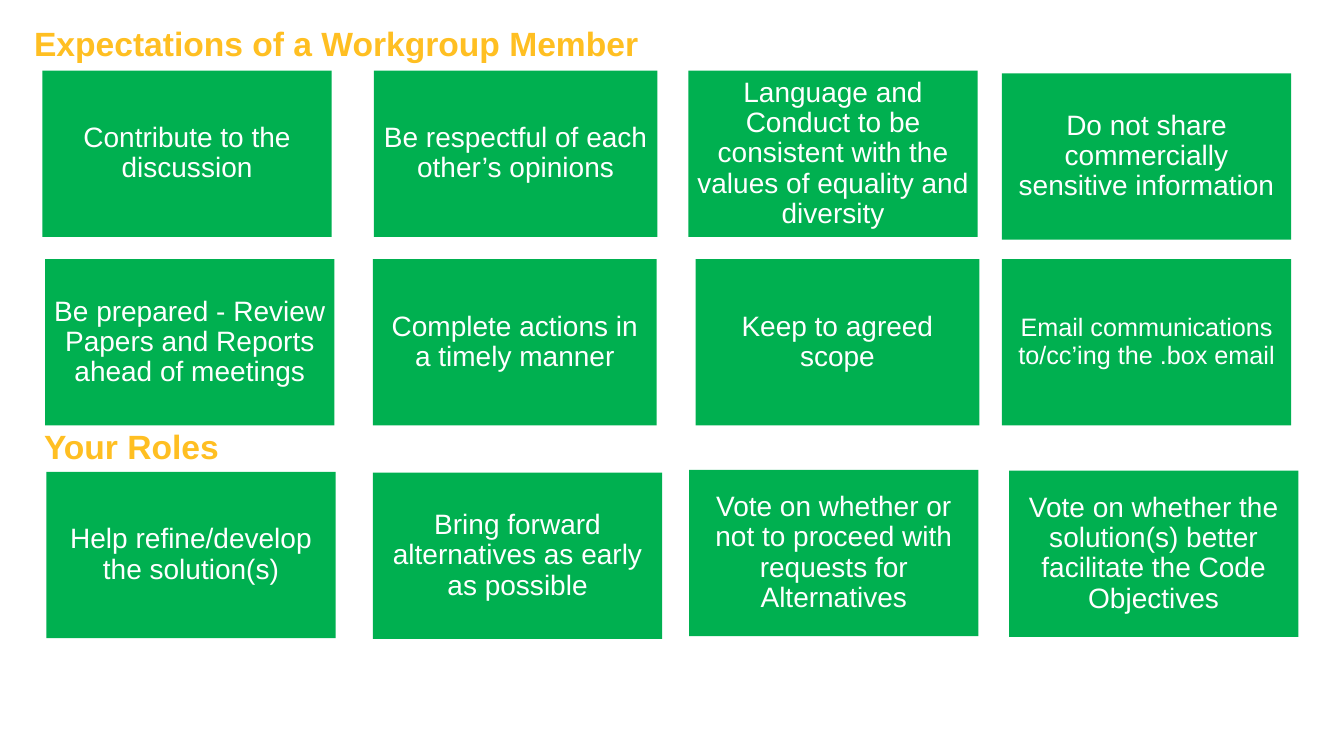
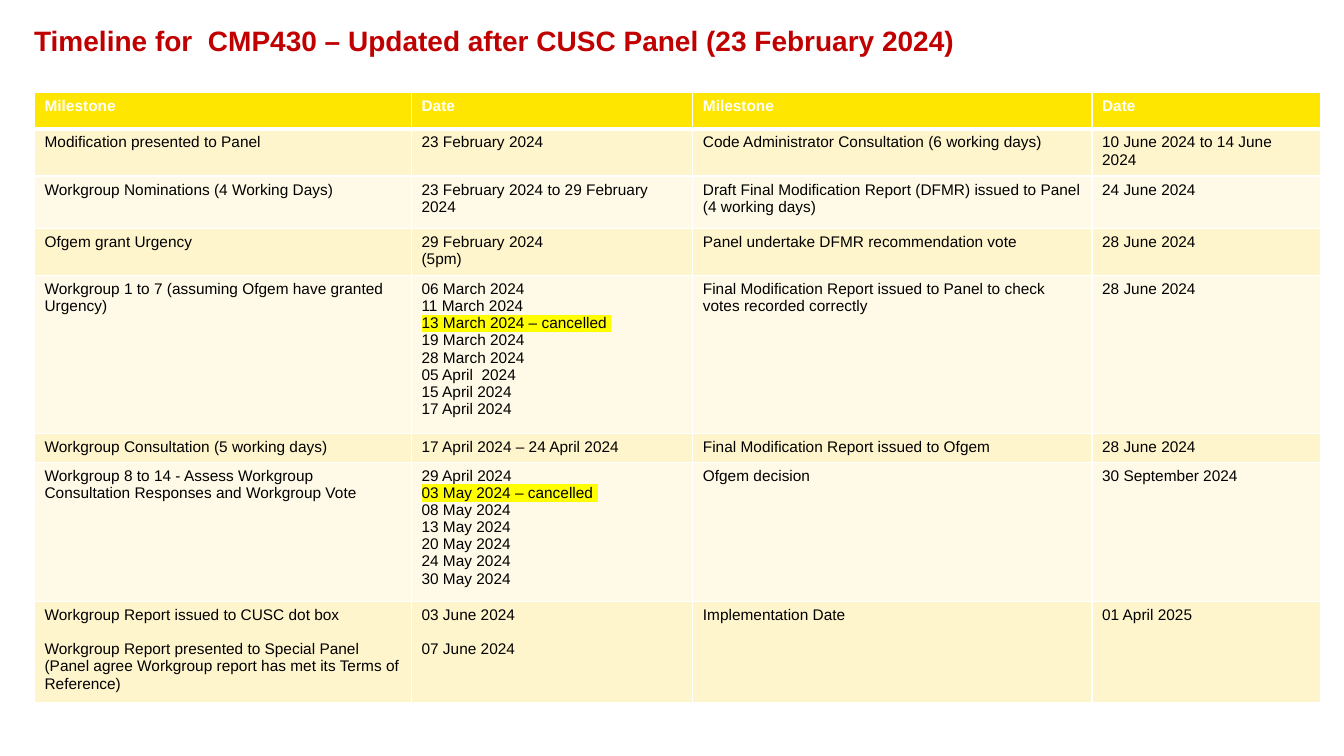
from lxml import etree
from pptx import Presentation
from pptx import util as u
from pptx.dml.color import RGBColor
from pptx.enum import shapes, text
from pptx.oxml import ns

WHITE = RGBColor(0xFF, 0xFF, 0xFF)
BLACK = RGBColor(0x00, 0x00, 0x00)
AMBER = RGBColor(0xFF, 0xBF, 0x22)
RED = RGBColor(0xC0, 0x00, 0x00)
GREEN = RGBColor(0x00, 0xB0, 0x50)
YELLOW = RGBColor(0xFF, 0xE6, 0x00)
BANDS = [RGBColor(0xFF, 0xF5, 0xCC), RGBColor(0xFF, 0xFA, 0xE7)]
HIGHLIGHT = RGBColor(0xFF, 0xFF, 0x00)
FONT = "Arial"


def add_run(p, words, size, color, bold=False):
    r = p.add_run()
    r.text = words
    r.font.name = FONT
    r.font.size = u.Pt(size)
    r.font.bold = bold
    r.font.color.rgb = color
    return r


def add_heading(s, words, left, top, size, color):
    sp = s.shapes.add_textbox(u.Cm(left), u.Cm(top), u.Cm(31.52), u.Cm(1.83))
    sp.text_frame.word_wrap = True
    p = sp.text_frame.paragraphs[0]
    p.line_spacing = 0.9
    add_run(p, words, size, color, True)


prs = Presentation()
prs.slide_width, prs.slide_height = u.Cm(33.87), u.Cm(19.05)
blank = prs.slide_layouts[6]

# Slide 1: expectations and roles
s = prs.slides.add_slide(blank)
add_heading(s, "Expectations of a Workgroup Member", 0.61, 0.56, 24, AMBER)
add_heading(s, "Your Roles", 0.86, 10.72, 24, AMBER)

# Cards: left, top, width, text size, wording
WIDE, NARROW = 7.29, 7.15
cards = [
    (1.07, 1.78, WIDE, 20, "Contribute to the discussion"),
    (9.42, 1.78, NARROW, 20, "Be respectful of each other’s opinions"),
    (17.35, 1.78, WIDE, 20, "Language and Conduct to be consistent with the values of equality and diversity"),
    (25.25, 1.85, WIDE, 20, "Do not share commercially sensitive information"),
    (1.14, 6.53, WIDE, 20, "Be prepared - Review Papers and Reports ahead of meetings"),
    (9.4, 6.53, NARROW, 20, "Complete actions in a timely manner"),
    (17.53, 6.53, NARROW, 20, "Keep to agreed scope"),
    (25.25, 6.53, WIDE, 18, "Email communications to/cc’ing the .box email"),
    (1.17, 11.89, WIDE, 20, "Help refine/develop the solution(s)"),
    (9.4, 11.91, WIDE, 20, "Bring forward alternatives as early as possible"),
    (17.37, 11.84, WIDE, 20, "Vote on whether or not to proceed with requests for Alternatives"),
    (25.43, 11.86, WIDE, 20, "Vote on whether the solution(s) better facilitate the Code Objectives"),
]
for left, top, width, size, words in cards:
    sp = s.shapes.add_shape(shapes.MSO_SHAPE.RECTANGLE,
                            u.Cm(left), u.Cm(top), u.Cm(width), u.Cm(4.19))
    sp.shadow.inherit = False
    sp.fill.solid()
    sp.fill.fore_color.rgb = GREEN
    sp.line.fill.background()
    tf = sp.text_frame
    tf.word_wrap = True
    tf.vertical_anchor = text.MSO_ANCHOR.MIDDLE
    tf.margin_left = tf.margin_right = tf.margin_top = tf.margin_bottom = u.Cm(0.2)
    p = tf.paragraphs[0]
    p.alignment = text.PP_ALIGN.CENTER
    p.line_spacing = 0.9
    add_run(p, words, size, WHITE)

# Slide 2: timeline
s = prs.slides.add_slide(blank)
add_heading(s, "Timeline for  CMP430 – Updated after CUSC Panel (23 February 2024)",
            0.61, 0.56, 20, RED)

# Each line of a cell is a paragraph
col_widths = [9.5, 7.09, 10.06, 5.77]
row_heights = [0.91, 1.12, 1.32, 1.12, 3.73, 0.69, 3.28, 2.41]
rows = [
    ["Milestone", "Date", "Milestone", "Date"],
    ["Modification presented to Panel", "23 February 2024",
     "Code Administrator Consultation (6 working days)", "10 June 2024 to 14 June 2024"],
    ["Workgroup Nominations (4 Working Days)", "23 February 2024 to 29 February 2024",
     "Draft Final Modification Report (DFMR) issued to Panel (4 working days)", "24 June 2024"],
    ["Ofgem grant Urgency", "29 February 2024\n(5pm)",
     "Panel undertake DFMR recommendation vote", "28 June 2024"],
    ["Workgroup 1 to 7 (assuming Ofgem have granted Urgency)",
     "06 March 2024\n11 March 2024\n13 March 2024 – cancelled \n19 March 2024\n"
     "28 March 2024\n05 April  2024\n15 April 2024\n17 April 2024",
     "Final Modification Report issued to Panel to check votes recorded correctly",
     "28 June 2024"],
    ["Workgroup Consultation (5 working days)", "17 April 2024 – 24 April 2024",
     "Final Modification Report issued to Ofgem", "28 June 2024"],
    ["Workgroup 8 to 14 - Assess Workgroup Consultation Responses and Workgroup Vote",
     "29 April 2024\n03 May 2024 – cancelled \n08 May 2024\n13 May 2024\n"
     "20 May 2024\n24 May 2024\n30 May 2024",
     "Ofgem decision", "30 September 2024"],
    ["Workgroup Report issued to CUSC dot box\nWorkgroup Report presented to Special Panel "
     "(Panel agree Workgroup report has met its Terms of Reference)",
     "03 June 2024\n07 June 2024", "Implementation Date", "01 April 2025"],
]
table = s.shapes.add_table(len(rows), len(col_widths), u.Cm(0.87), u.Cm(2.34),
                           u.Cm(sum(col_widths)), u.Cm(sum(row_heights))).table
table.horz_banding = False
for column, width in zip(table.columns, col_widths):
    column.width = u.Cm(width)
for row, height in zip(table.rows, row_heights):
    row.height = u.Cm(height)

for i, row in enumerate(rows):
    header, last = i == 0, i == len(rows) - 1
    for j, words in enumerate(row):
        cell = table.cell(i, j)
        cell.fill.solid()
        cell.fill.fore_color.rgb = YELLOW if header else BANDS[(i - 1) % 2]

        # White borders, heavier under the header
        tcPr = cell._tc.get_or_add_tcPr()
        for k, side in enumerate(["lnL", "lnR", "lnT", "lnB"]):
            heavy = (header and side == "lnB") or (i == 1 and side == "lnT")
            ln = etree.Element(ns.qn("a:" + side), w=str(u.Pt(3 if heavy else 1)))
            fill = etree.SubElement(ln, ns.qn("a:solidFill"))
            etree.SubElement(fill, ns.qn("a:srgbClr"), val=str(WHITE))
            tcPr.insert(k, ln)

        tf = cell.text_frame
        for n, line in enumerate(words.split("\n")):
            p = tf.add_paragraph() if n else tf.paragraphs[0]
            if n and last:
                p.space_before = u.Pt(12)
            r = add_run(p, line, 11, WHITE if header else BLACK, header)
            if "cancelled" in line:
                mark = etree.Element(ns.qn("a:highlight"))
                etree.SubElement(mark, ns.qn("a:srgbClr"), val=str(HIGHLIGHT))
                r._r.rPr.find(ns.qn("a:solidFill")).addnext(mark)

prs.save("out.pptx")
